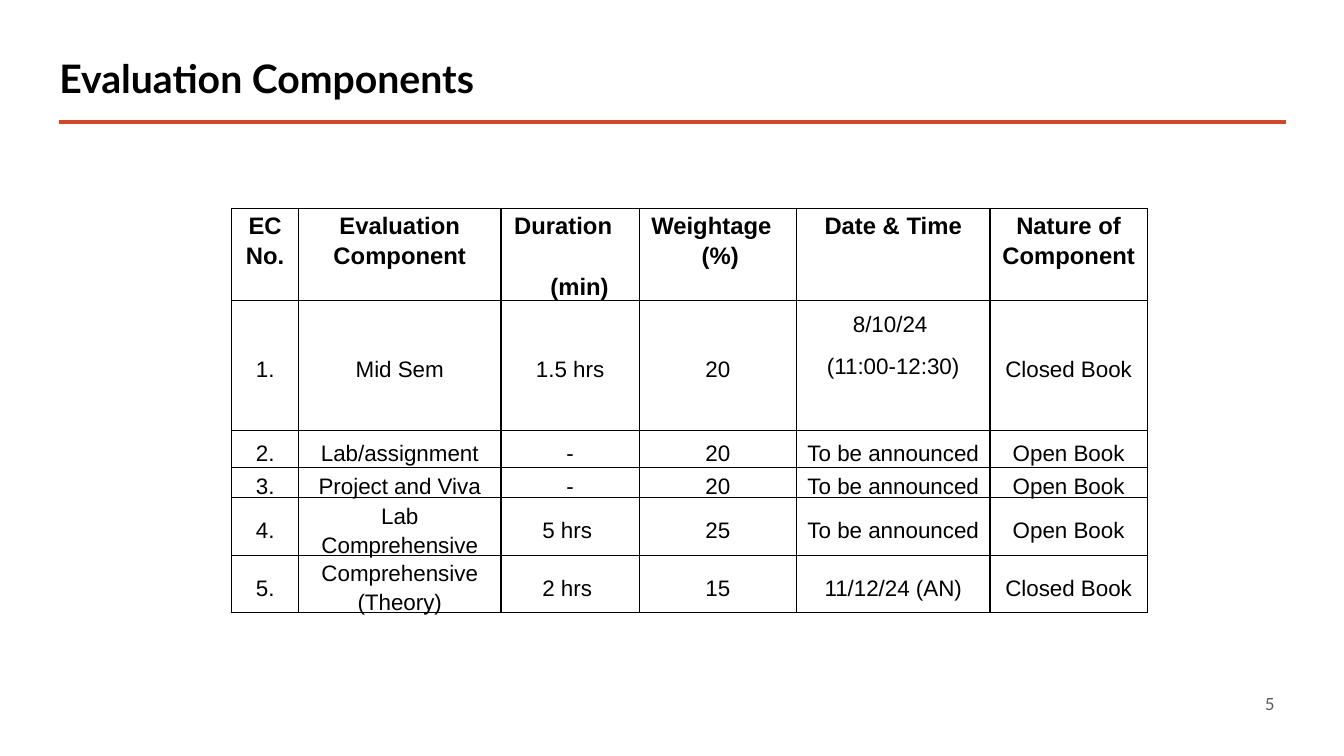
from dataclasses import dataclass

from lxml.etree import SubElement
from pptx import Presentation
from pptx.dml.color import RGBColor
from pptx.enum.shapes import MSO_CONNECTOR
from pptx.enum.text import MSO_ANCHOR, PP_ALIGN
from pptx.oxml.ns import qn
from pptx.util import Pt

PX = 9144


@dataclass(frozen=True)
class Theme:
    """Colours, fonts and type sizes of the slide."""
    ink: str = "000000"
    accent: str = "D24726"
    muted: str = "595959"
    heading_font: str = "Lato"
    table_font: str = "Arial"
    title_size: int = 28
    header_size: int = 17
    body_size: int = 16
    number_size: int = 12


THEME = Theme()
COLUMNS = [66, 201, 137, 156, 192, 156]
ROWS = [91, 129, 37, 30, 57, 57]
HEADERS = [
    ["EC No."],
    ["Evaluation Component"],
    [("Duration", {"indent": 3}), ("(min)", {"indent": 39, "before": 22})],
    [("Weightage", {"indent": 2}), ("(%)", {"indent": 52})],
    ["Date & Time"],
    ["Nature of Component"],
]
COMPONENTS = [
    ["1.", "Mid Sem", "1.5 hrs", "20", ("8/10/24 ", "(11:00-12:30)"), "Closed Book"],
    ["2.", "Lab/assignment", "-", "20", "To be announced", "Open Book"],
    ["3.", "Project and Viva", "-", "20", "To be announced", "Open Book"],
    ["4.", "Lab Comprehensive", "5 hrs", "25", "To be announced", "Open Book"],
    ["5.", "Comprehensive (Theory)", "2 hrs", "15", "11/12/24 (AN)", "Closed Book"],
]


def px(length):
    """Turn whole pixels into EMU."""
    return length * PX


def write(frame, text, *, size, font, color=THEME.ink, bold=False,
          align=PP_ALIGN.LEFT, spacing=1.0, before=0, after=0, indent=None, first=True):
    """Write one formatted paragraph into a text frame."""
    paragraph = frame.paragraphs[0] if first else frame.add_paragraph()
    paragraph.alignment = align
    paragraph.line_spacing = spacing
    if before:
        paragraph.space_before = Pt(before)
    if after:
        paragraph.space_after = Pt(after)
    if indent is not None:
        paragraph.alignment = PP_ALIGN.LEFT
        properties = paragraph._p.get_or_add_pPr()
        properties.set("marL", str(px(indent)))
        properties.set("indent", "0")
    run = paragraph.add_run()
    run.text = text
    run.font.size = Pt(size)
    run.font.name = font
    run.font.bold = bold
    run.font.color.rgb = RGBColor.from_string(color)


def add_label(slide, box, text, **text_format):
    """Place a vertically centred text box."""
    label = slide.shapes.add_textbox(*map(px, box)).text_frame
    label.word_wrap = True
    label.vertical_anchor = MSO_ANCHOR.MIDDLE
    write(label, text, font=THEME.heading_font, **text_format)


def add_heading(slide, box):
    """Place the title and the rule below it."""
    left, top, width, height = box
    add_label(slide, (left - 10, top, 1000, 70), "Evaluation Components",
              size=THEME.title_size, bold=True, spacing=0.9)
    rule_y = top + height
    rule = slide.shapes.add_connector(
        MSO_CONNECTOR.STRAIGHT, px(left), px(rule_y), px(left + width), px(rule_y))
    rule.line.color.rgb = RGBColor.from_string(THEME.accent)
    rule.line.width = Pt(2.25)
    SubElement(rule._element.spPr, qn("a:effectLst"))


def outline(cell):
    """Draw thin lines on all four sides of a cell and leave it unfilled."""
    properties = cell._tc.get_or_add_tcPr()
    for side in ("lnL", "lnR", "lnT", "lnB"):
        line = SubElement(properties, qn(f"a:{side}"), w=str(Pt(1)))
        SubElement(SubElement(line, qn("a:solidFill")), qn("a:srgbClr"), val=THEME.ink)
    cell.fill.background()


def prepare_cell(cell, anchor, bottom=-5):
    """Set the insets, anchor and outline of a cell."""
    cell.margin_left = cell.margin_right = px(10)
    cell.margin_top = 0
    cell.margin_bottom = px(bottom)
    cell.vertical_anchor = anchor
    outline(cell)


def add_components_table(slide, box):
    """Place the table of evaluation components."""
    table = slide.shapes.add_table(len(ROWS), len(COLUMNS), *map(px, box)).table
    table.first_row = table.horz_banding = False
    for column, width in zip(table.columns, COLUMNS):
        column.width = px(width)
    for row, height in zip(table.rows, ROWS):
        row.height = px(height)
    common = {"font": THEME.table_font, "align": PP_ALIGN.CENTER, "spacing": 1.15}
    for column, heading in enumerate(HEADERS):
        cell = table.cell(0, column)
        prepare_cell(cell, MSO_ANCHOR.TOP)
        for index, part in enumerate(heading):
            text, extra = (part, {}) if isinstance(part, str) else part
            write(cell.text_frame, text, size=THEME.header_size, bold=True,
                  first=index == 0, **common, **extra)
    for row, component in enumerate(COMPONENTS, 1):
        for column, content in enumerate(component):
            lines = (content,) if isinstance(content, str) else content
            cell = table.cell(row, column)
            prepare_cell(cell, MSO_ANCHOR.MIDDLE, bottom=-5 if len(lines) == 1 else 43)
            for index, text in enumerate(lines):
                write(cell.text_frame, text, size=THEME.body_size,
                      after=10 if index < len(lines) - 1 else 0,
                      indent=31 if text in ("5 hrs", "2 hrs") else None,
                      first=index == 0, **common)


def main():
    """Build the slide and save it."""
    presentation = Presentation()
    presentation.slide_width = px(1333)
    presentation.slide_height = px(750)
    slide = presentation.slides.add_slide(presentation.slide_layouts[6])
    add_heading(slide, (59, 45, 1216, 76))
    add_label(slide, (916, 678, 358, 40), "5", size=THEME.number_size,
              color=THEME.muted, align=PP_ALIGN.RIGHT)
    add_components_table(slide, (230, 207, sum(COLUMNS), sum(ROWS)))
    presentation.save("out.pptx")


if __name__ == "__main__":
    main()
